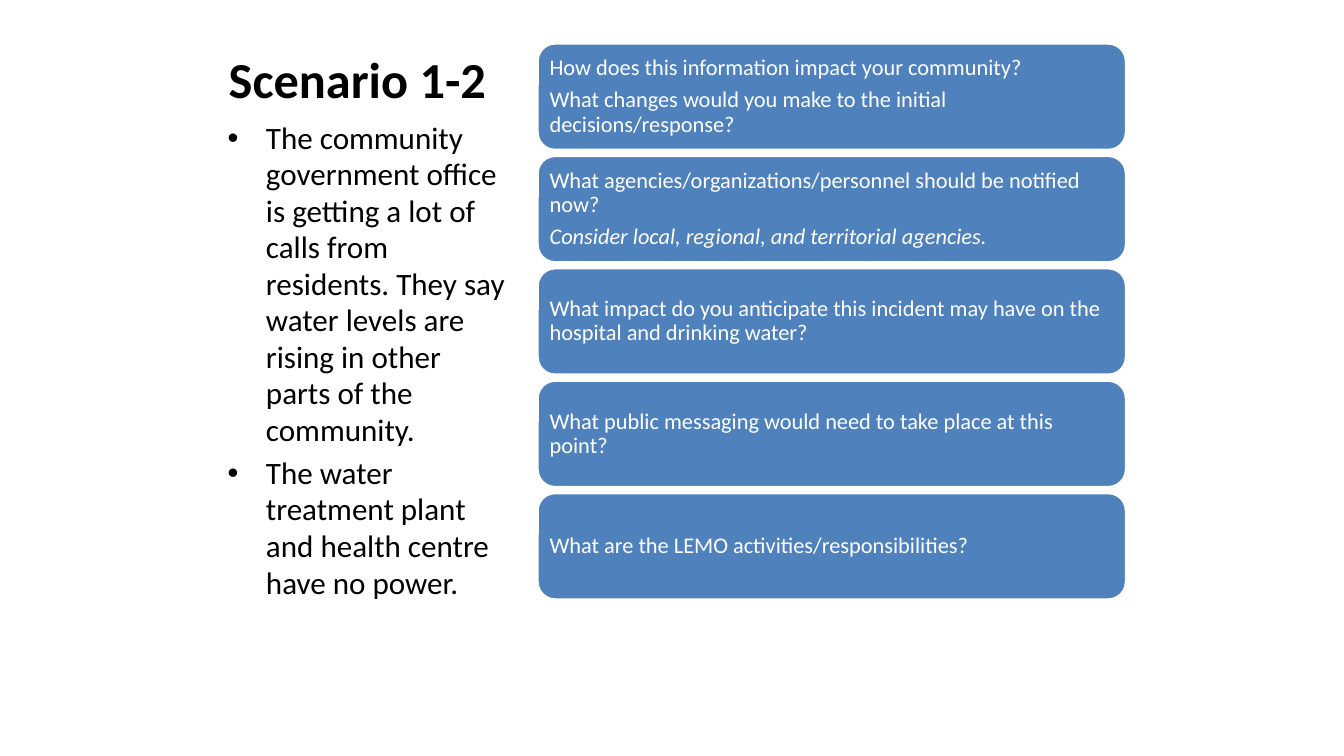
"""Build the Scenario 1-2 slide: a bulleted story and five question cards."""
from lxml import etree
from pptx import Presentation, util as u
from pptx.dml.color import RGBColor
from pptx.enum import shapes, text
from pptx.oxml.ns import qn

BLACK = RGBColor(0x00, 0x00, 0x00)
WHITE = RGBColor(0xFF, 0xFF, 0xFF)
BLUE = RGBColor(0x4F, 0x81, 0xBD)

deck = Presentation()
deck.slide_width, deck.slide_height = u.Inches(13.33), u.Inches(7.5)
slide = deck.slides.add_slide(deck.slide_layouts[6])


def put(item, vals):
    for key, val in vals.items():
        setattr(item, key, val)


def write(para, words, size, color, **more):
    para.text = words
    font = para.runs[0].font
    put(font, {"name": "Calibri", "size": u.Pt(size), **more})
    font.color.rgb = color


title = slide.shapes.add_textbox(*map(u.Inches, (2.17, 0.3, 3.29, 1.27)))
put(title.text_frame, {"word_wrap": True, "margin_bottom": u.Inches(0.49),
                       "vertical_anchor": text.MSO_ANCHOR.BOTTOM})
write(title.text_frame.paragraphs[0], "Scenario 1-2", 36, BLACK, bold=True)

story = [
    "The community government office is getting a lot of calls from residents. "
    "They say water levels are rising in other parts of the community.",
    "The water treatment plant and health centre have no power.",
]
body = slide.shapes.add_textbox(*map(u.Inches, (2.16, 1.14, 3, 4.69)))
frame = body.text_frame
frame.word_wrap = True
for row, words in enumerate(story):
    para = frame.paragraphs[0] if row == 0 else frame.add_paragraph()
    props = para._p.get_or_add_pPr()
    put(para, {"line_spacing": 0.98, "space_before": u.Pt(4.5 if row else 0)})
    props.set("marL", str(u.Inches(0.38)))
    props.set("indent", str(u.Inches(-0.38)))
    etree.SubElement(props, qn("a:buFont")).set("typeface", "Arial")
    etree.SubElement(props, qn("a:buChar")).set("char", "•")
    write(para, words, 22.2, BLACK)

cards = [
    ["How does this information impact your community?",
     "What changes would you make to the initial decisions/response?"],
    ["What agencies/organizations/personnel should be notified now?",
     "Consider local, regional, and territorial agencies."],
    ["What impact do you anticipate this incident may have on the "
     "hospital and drinking water?"],
    ["What public messaging would need to take place at this point?"],
    ["What are the LEMO activities/responsibilities?"],
]
TOP, STEP = 0.43, 1.115
sides = ("left", "top", "right", "bottom")
for row, lines in enumerate(cards):
    card = slide.shapes.add_shape(
        shapes.MSO_SHAPE.ROUNDED_RECTANGLE,
        *map(u.Inches, (5.33, TOP + row * STEP, 5.84, 1.06)))
    card.shadow.inherit = False
    card.fill.solid()
    card.fill.fore_color.rgb = BLUE
    card.line.color.rgb = WHITE
    card.line.width = u.Pt(2)
    frame = card.text_frame
    put(frame, {f"margin_{side}": u.Inches(0.07) for side in sides})
    put(frame, {"word_wrap": True, "vertical_anchor": text.MSO_ANCHOR.MIDDLE})
    for num, words in enumerate(lines):
        para = frame.paragraphs[0] if num == 0 else frame.add_paragraph()
        put(para, {"alignment": text.PP_ALIGN.LEFT, "line_spacing": 0.9,
                   "space_after": u.Pt(5.6)})
        write(para, words, 16, WHITE, italic=words.startswith("Consider"))

deck.save("out.pptx")
